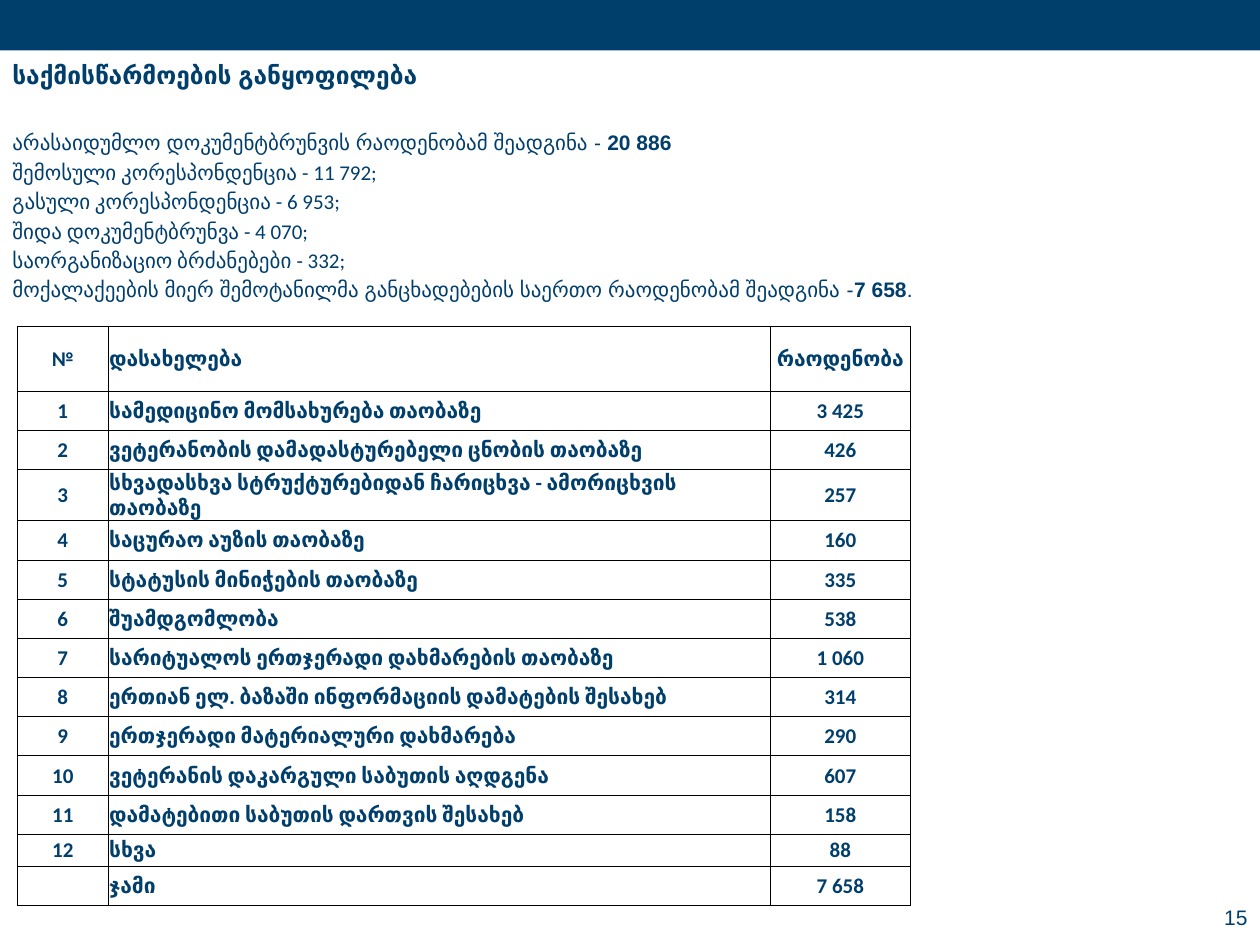
from lxml.etree import SubElement
from pptx import Presentation
from pptx.dml.color import RGBColor
from pptx.enum.shapes import MSO_SHAPE
from pptx.enum.text import MSO_ANCHOR, PP_ALIGN
from pptx.oxml.ns import qn
from pptx.util import Cm, Pt

NAVY = "003E6C"
BLACK = "000000"

SUMMARY = [
    [("არასაიდუმლო დოკუმენტბრუნვის რაოდენობამ შეადგინა - ", "Arial", False),
     ("20 886", "Arial", True)],
    [("შემოსული კორესპონდენცია - 11 792;", "Calibri", False)],
    [("გასული კორესპონდენცია - 6 953;", "Calibri", False)],
    [("შიდა დოკუმენტბრუნვა - 4 070;", "Calibri", False)],
    [("საორგანიზაციო ბრძანებები - 332;", "Calibri", False)],
    [("მოქალაქეების მიერ შემოტანილმა განცხადებების საერთო რაოდენობამ შეადგინა -",
      "Arial", False),
     ("7 658", "Arial", True), (".", "Arial", False)],
]

REQUESTS = [
    ("სამედიცინო მომსახურება თაობაზე", "3 425"),
    ("ვეტერანობის დამადასტურებელი ცნობის თაობაზე", "426"),
    ("სხვადასხვა სტრუქტურებიდან ჩარიცხვა - ამორიცხვის თაობაზე", "257"),
    ("საცურაო აუზის თაობაზე", "160"),
    ("სტატუსის მინიჭების თაობაზე", "335"),
    ("შუამდგომლობა", "538"),
    ("სარიტუალოს ერთჯერადი დახმარების თაობაზე", "1 060"),
    ("ერთიან ელ. ბაზაში ინფორმაციის დამატების შესახებ", "314"),
    ("ერთჯერადი მატერიალური დახმარება", "290"),
    ("ვეტერანის დაკარგული საბუთის აღდგენა", "607"),
    ("დამატებითი საბუთის დართვის შესახებ", "158"),
    ("სხვა", "88"),
]


def color(value):
    """Turn a hex string into a colour."""
    return RGBColor.from_string(value)


def apply_format(target, values):
    """Set every attribute in values on the target."""
    for name, value in values.items():
        setattr(target, name, value)


def add_run(paragraph, text, font="Arial", size=12, bold=False):
    """Append a navy run to a paragraph."""
    run = paragraph.add_run()
    run.text = text
    apply_format(run.font, {"name": font, "size": Pt(size), "bold": bold})
    run.font.color.rgb = color(NAVY)


def add_banner(slide, left, top, width, height):
    """Place the plain navy band."""
    banner = slide.shapes.add_shape(MSO_SHAPE.RECTANGLE, left, top, width, height)
    banner.shadow.inherit = False
    banner.fill.solid()
    banner.fill.fore_color.rgb = color(NAVY)
    banner.line.fill.background()


def add_summary(slide, left, top, width, height):
    """Place the heading and the correspondence figures."""
    frame = slide.shapes.add_textbox(left, top, width, height).text_frame
    frame.word_wrap = True
    add_run(frame.paragraphs[0], "საქმისწარმოების განყოფილება", size=14, bold=True)
    for index, line in enumerate(SUMMARY):
        paragraph = frame.add_paragraph()
        paragraph.space_before = Pt(2.4 if index else 23)
        for text, font, bold in line:
            add_run(paragraph, text, font, bold=bold)


def add_borders(cell):
    """Draw thin black lines on all four sides of a cell."""
    properties = cell._tc.get_or_add_tcPr()
    for side in ("a:lnL", "a:lnR", "a:lnT", "a:lnB"):
        line = SubElement(properties, qn(side), w=str(Pt(0.5)))
        fill = SubElement(line, qn("a:solidFill"))
        SubElement(fill, qn("a:srgbClr"), val=BLACK)


def fill_cell(cell, text, alignment):
    """Write one bordered table cell."""
    add_borders(cell)
    cell.fill.background()
    apply_format(cell, {
        "margin_left": Cm(0.02), "margin_right": Cm(0.02),
        "margin_top": Cm(0.02), "margin_bottom": 0,
        "vertical_anchor": MSO_ANCHOR.MIDDLE,
    })
    paragraph = cell.text_frame.paragraphs[0]
    paragraph.alignment = alignment
    add_run(paragraph, text, "Calibri", bold=True)


def add_request_table(slide, left, top, width, height):
    """Place the table of requests with its header and total."""
    numbered = [(str(number), *request) for number, request in enumerate(REQUESTS, 1)]
    rows = [("№", "დასახელება", "რაოდენობა"), *numbered, ("", "ჯამი", "7 658")]
    table = slide.shapes.add_table(len(rows), 3, left, top, width, height).table
    apply_format(table, {"first_row": False, "horz_banding": False})
    number_width, count_width = Cm(1.83), Cm(2.82)
    widths = (number_width, width - number_width - count_width, count_width)
    for column, column_width in zip(table.columns, widths):
        column.width = column_width
    special_heights = {0: Cm(1.3), len(REQUESTS): Cm(0.64)}
    alignments = (PP_ALIGN.CENTER, PP_ALIGN.LEFT, PP_ALIGN.CENTER)
    for index, values in enumerate(rows):
        table.rows[index].height = special_heights.get(index, Cm(0.79))
        for cell, text, alignment in zip(table.rows[index].cells, values, alignments):
            fill_cell(cell, text, alignment)


def add_page_number(slide, left, top, width, height):
    """Place the page number at the right of its box."""
    frame = slide.shapes.add_textbox(left, top, width, height).text_frame
    apply_format(frame, {"word_wrap": True, "vertical_anchor": MSO_ANCHOR.MIDDLE})
    frame.paragraphs[0].alignment = PP_ALIGN.RIGHT
    add_run(frame.paragraphs[0], "15")


def main():
    """Build and save the slide."""
    presentation = Presentation()
    apply_format(presentation, {"slide_width": Cm(25.4), "slide_height": Cm(19.05)})
    slide = presentation.slides.add_slide(presentation.slide_layouts[6])
    add_banner(slide, 0, 0, presentation.slide_width, Cm(1.02))
    add_summary(slide, 0, Cm(1.09), presentation.slide_width, Cm(17.96))
    add_request_table(slide, Cm(0.35), Cm(6.58), Cm(18), Cm(11.35))
    add_page_number(slide, Cm(22.43), Cm(18.03), Cm(2.97), Cm(0.91))
    presentation.save("out.pptx")


if __name__ == "__main__":
    main()
